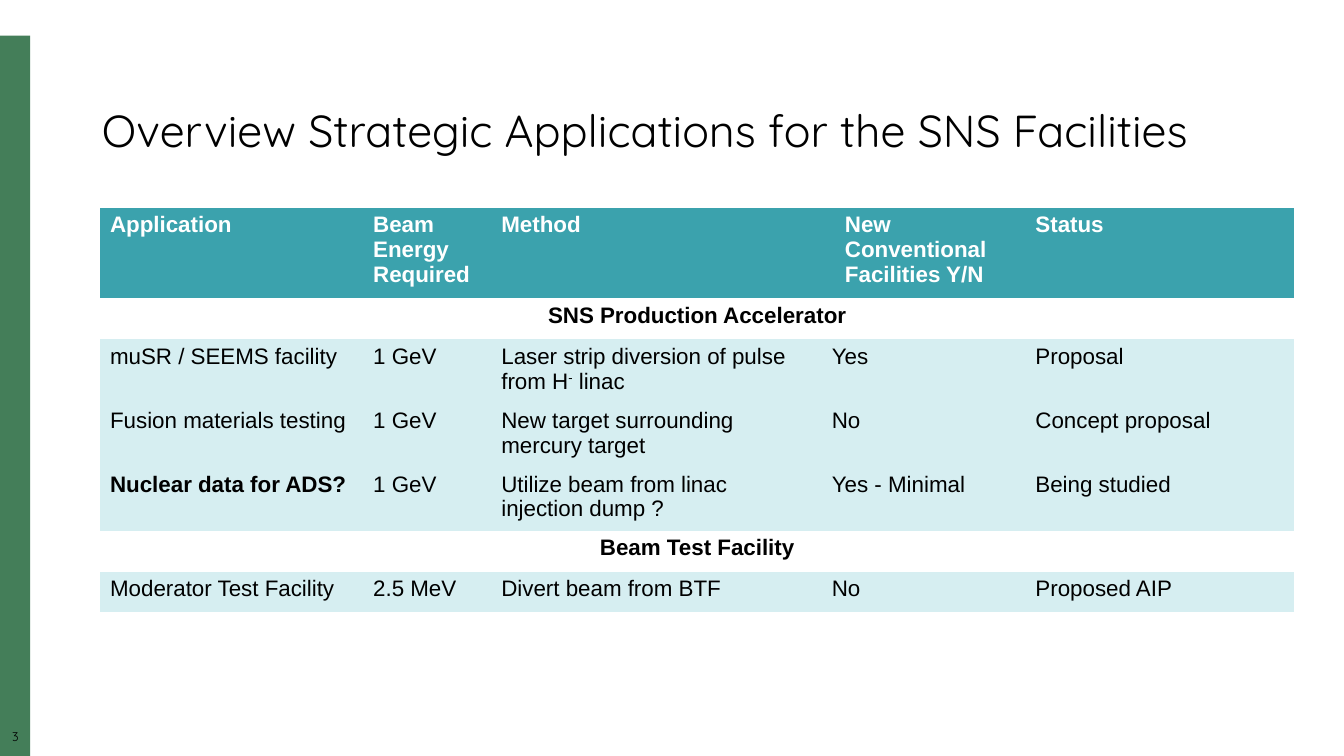
import pptx
import pptx.dml.color
import pptx.enum.shapes
import pptx.enum.text
import pptx.util
from pptx.util import Cm

COLORS = {
    "black": "000000",
    "white": "FFFFFF",
    "green": "447E59",
    "teal": "3BA2AD",
    "pale": "D6EEF1",
}
PLAIN_TABLE_STYLE = "{2D5ABB26-0587-4C30-8999-92F81FD0307C}"
CENTER = pptx.enum.text.PP_ALIGN.CENTER

COLUMN_WIDTHS = [6.63, 3.23, 8.33, 0.33, 4.8, 6.78]
BANNER_HEIGHT = 1.03
HEADER = ["Application", "Beam Energy Required", "Method",
          "New Conventional Facilities Y/N", "Status"]
SECTIONS = {
    "SNS Production Accelerator": (1.51, [
        ["muSR / SEEMS facility", "1 GeV",
         "Laser strip diversion of pulse from H^-^ linac", "Yes", "Proposal"],
        ["Fusion materials testing", "1 GeV",
         "New target surrounding mercury target", "No", "Concept proposal"],
        ["Nuclear data for ADS?", "1 GeV",
         "Utilize beam from linac injection dump ?", "Yes - Minimal", "Being studied"],
    ]),
    "Beam Test Facility": (1.03, [
        ["Moderator Test Facility", "2.5 MeV", "Divert beam from BTF", "No", "Proposed AIP"],
    ]),
}
BOLD_ENTRY = "Nuclear data for ADS?"


def color(name):
    return pptx.dml.color.RGBColor.from_string(COLORS[name])


class SlideBuilder:
    heading_font = "Quicksand"
    table_font = "Arial"

    def __init__(self, presentation):
        self.slide = presentation.slides.add_slide(presentation.slide_layouts[6])

    def fill_paragraph(self, paragraph, text, font, size, color_name="black", bold=False):
        """Fill a paragraph; text between carets is superscript."""
        for index, part in enumerate(text.split("^")):
            run = paragraph.add_run()
            run.text = part
            if index % 2:
                run._r.get_or_add_rPr().set("baseline", "30000")
        paragraph.font.name = font
        paragraph.font.size = pptx.util.Pt(size)
        paragraph.font.bold = bold
        paragraph.font.color.rgb = color(color_name)

    def bar(self, left, top, width, height, color_name):
        shape = self.slide.shapes.add_shape(
            pptx.enum.shapes.MSO_SHAPE.RECTANGLE, Cm(left), Cm(top), Cm(width), Cm(height))
        shape.shadow.inherit = False
        shape.fill.solid()
        shape.fill.fore_color.rgb = color(color_name)
        shape.line.fill.background()

    def text(self, left, top, width, height, text, size, inset=(0, 0), alignment=None):
        box = self.slide.shapes.add_textbox(Cm(left), Cm(top), Cm(width), Cm(height))
        frame = box.text_frame
        frame.word_wrap = True
        frame.margin_left = frame.margin_right = Cm(inset[0])
        frame.margin_top = frame.margin_bottom = Cm(inset[1])
        paragraph = frame.paragraphs[0]
        paragraph.alignment = alignment
        paragraph.line_spacing = 0.9
        self.fill_paragraph(paragraph, text, self.heading_font, size)

    def table(self, left, top, widths, heights):
        frame = self.slide.shapes.add_table(
            len(heights), len(widths), Cm(left), Cm(top), Cm(sum(widths)), Cm(sum(heights)))
        table = frame.table
        table.horz_banding = False
        table._tbl.tblPr[0].text = PLAIN_TABLE_STYLE
        for column, width in zip(table.columns, widths):
            column.width = Cm(width)
        for row, height in zip(table.rows, heights):
            row.height = Cm(height)
        return table

    def table_row(self, table, row, texts, starts, fill, color_name="black",
                  bold=False, alignment=None):
        """Fill one row; each cell spans from its start column to the next."""
        ends = starts[1:] + [len(table.columns)]
        for text, start, end in zip(texts, starts, ends):
            cell = table.cell(row, start)
            if end - start > 1:
                cell.merge(table.cell(row, end - 1))
            cell.fill.solid()
            cell.fill.fore_color.rgb = color(fill)
            paragraph = cell.text_frame.paragraphs[0]
            paragraph.alignment = alignment
            self.fill_paragraph(paragraph, text, self.table_font, 16, color_name,
                                bold or text == BOLD_ENTRY)


def main():
    presentation = pptx.Presentation()
    presentation.slide_width = Cm(33.87)
    presentation.slide_height = Cm(19.05)
    builder = SlideBuilder(presentation)

    builder.bar(0, 0.9, 0.76, 18.15, "green")
    builder.text(0, 18.41, 0.78, 0.43, "3", 9, alignment=CENTER)
    builder.text(2.32, 2.62, 31.5, 1.5, "Overview Strategic Applications for the SNS Facilities",
                 32, inset=(0.25, 0.13))

    heights = [2.14]
    for height, entries in SECTIONS.values():
        heights += [BANNER_HEIGHT] + [height] * len(entries)
    table = builder.table(2.52, 5.23, COLUMN_WIDTHS, heights)
    builder.table_row(table, 0, HEADER, [0, 1, 2, 4, 5], "teal", "white", bold=True)
    row = 1
    for banner, (_, entries) in SECTIONS.items():
        builder.table_row(table, row, [banner], [0], "white", bold=True, alignment=CENTER)
        for row, entry in enumerate(entries, row + 1):
            builder.table_row(table, row, entry, [0, 1, 2, 3, 5], "pale")
        row += 1

    presentation.save("out.pptx")


if __name__ == "__main__":
    main()
